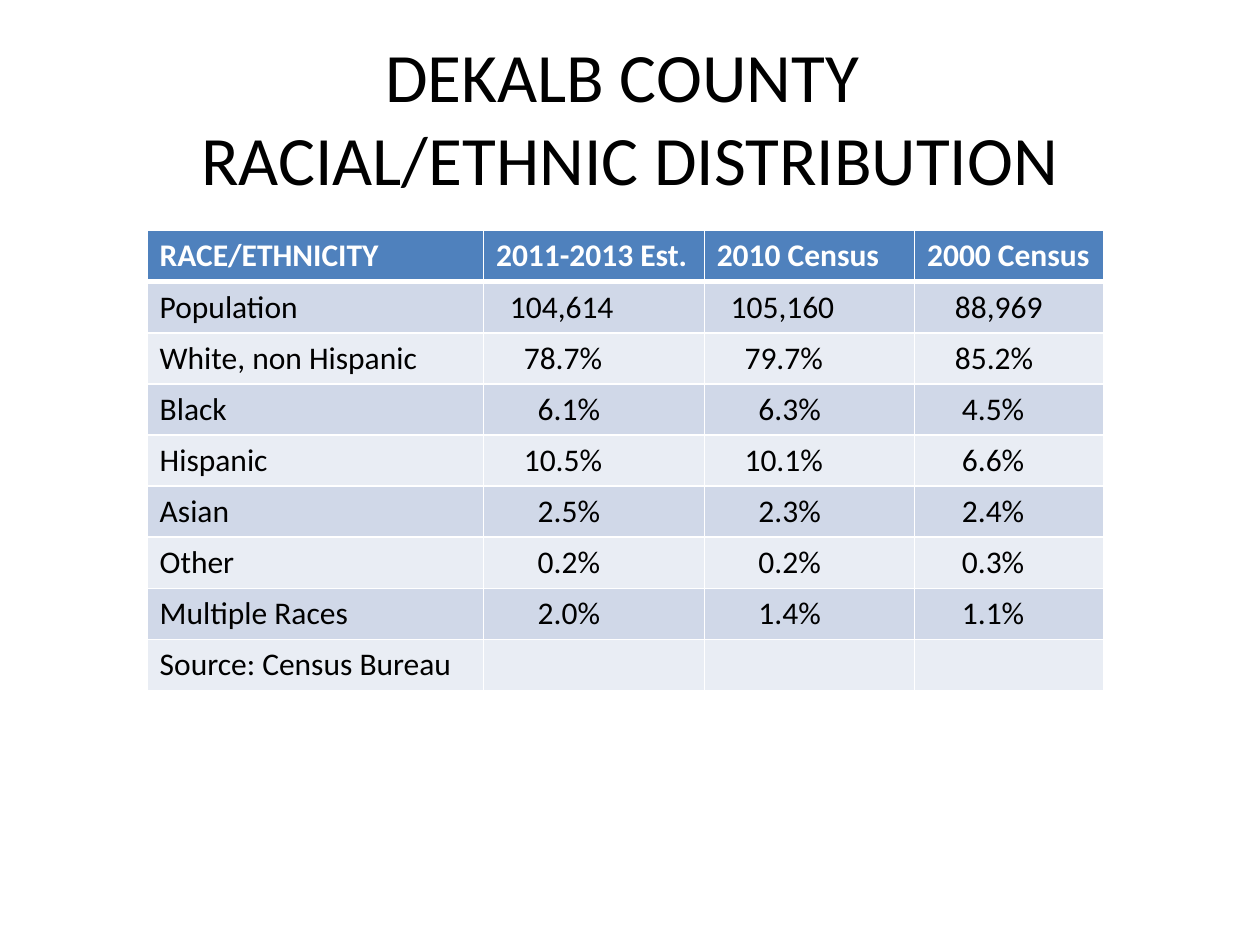
from dataclasses import dataclass

import pptx
import pptx.dml.color
import pptx.enum.text
import pptx.oxml
import pptx.oxml.ns
import pptx.util
from pptx.util import Cm

RGBColor = pptx.dml.color.RGBColor
BLACK = RGBColor(0x00, 0x00, 0x00)
WHITE = RGBColor(0xFF, 0xFF, 0xFF)
HEADER_BLUE = RGBColor(0x4F, 0x81, 0xBD)
BAND_DARK = RGBColor(0xD0, 0xD8, 0xE8)
BAND_LIGHT = RGBColor(0xE9, 0xED, 0xF4)
FONT = "Calibri"
CELL_MARGIN = 0.25  # cm
INDENT_STEP = 0.14  # cm


@dataclass
class RaceRow:
    label: str
    values: tuple[str, ...] = ("", "", "")
    indents: tuple[int, ...] = (0, 0, 0)  # steps before each value


HEADER = RaceRow("RACE/ETHNICITY", ("2011-2013 Est.", "2010 Census", "2000 Census"))
ROWS = [
    RaceRow("Population", ("104,614", "105,160", "88,969"), (2, 2, 4)),
    RaceRow("White, non Hispanic", ("78.7%", "79.7%", "85.2%"), (4, 4, 4)),
    RaceRow("Black", ("6.1%", "6.3%", "4.5%"), (6, 6, 5)),
    RaceRow("Hispanic", ("10.5%", "10.1%", "6.6%"), (4, 4, 5)),
    RaceRow("Asian", ("2.5%", "2.3%", "2.4%"), (6, 6, 5)),
    RaceRow("Other", ("0.2%", "0.2%", "0.3%"), (6, 6, 5)),
    RaceRow("Multiple Races", ("2.0%", "1.4%", "1.1%"), (6, 6, 5)),
    RaceRow("Source: Census Bureau"),
]
COLUMN_WIDTHS = (6.78, 4.45, 4.24, 3.81)
ROW_HEIGHT = 1.03


def add_run(p, text: str, size: float, color: RGBColor, bold: bool = False) -> None:
    r = p.add_run()
    r.text = text
    r.font.name = FONT
    r.font.size = pptx.util.Pt(size)
    r.font.bold = bold
    r.font.color.rgb = color


def set_borders(cell, top: int, bottom: int) -> None:
    """Draw white cell borders; widths are in points."""
    tc_pr = cell._tc.get_or_add_tcPr()
    sides = (("lnL", 1), ("lnR", 1), ("lnT", top), ("lnB", bottom))
    for i, (tag, width) in enumerate(sides):
        tc_pr.insert(i, pptx.oxml.parse_xml(
            f'<a:{tag} {pptx.oxml.ns.nsdecls("a")} w="{pptx.util.Pt(width)}">'
            f'<a:solidFill><a:srgbClr val="{WHITE}"/></a:solidFill></a:{tag}>'))


def fill_row(table, index: int, row: RaceRow) -> None:
    is_header = index == 0
    fill = HEADER_BLUE if is_header else BAND_DARK if index % 2 else BAND_LIGHT
    texts = (row.label, *row.values)
    for col, (text, indent) in enumerate(zip(texts, (0, *row.indents))):
        cell = table.cell(index, col)
        cell.fill.solid()
        cell.fill.fore_color.rgb = fill
        cell.margin_left = Cm(CELL_MARGIN + indent * INDENT_STEP)
        set_borders(cell, 3 if index == 1 else 1, 3 if is_header else 1)
        if text:
            add_run(cell.text_frame.paragraphs[0], text, 18,
                    WHITE if is_header else BLACK, is_header)


def add_title(s, lines: tuple[str, ...]) -> None:
    sp = s.shapes.add_textbox(Cm(1.27), Cm(0.76), Cm(22.86), Cm(3.18))
    tf = sp.text_frame
    tf.word_wrap = True
    tf.vertical_anchor = pptx.enum.text.MSO_ANCHOR.MIDDLE
    p = tf.paragraphs[0]
    p.alignment = pptx.enum.text.PP_ALIGN.CENTER
    for i, line in enumerate(lines):
        if i:
            p.add_line_break()
        add_run(p, line, 39.6, BLACK)


def add_race_table(s, rows: list[RaceRow]) -> None:
    table = s.shapes.add_table(
        len(rows), len(COLUMN_WIDTHS), Cm(2.97), Cm(4.65),
        Cm(sum(COLUMN_WIDTHS)), Cm(ROW_HEIGHT * len(rows))).table
    for column, width in zip(table.columns, COLUMN_WIDTHS):
        column.width = Cm(width)
    for i, row in enumerate(rows):
        table.rows[i].height = Cm(ROW_HEIGHT)
        fill_row(table, i, row)


def main() -> None:
    prs = pptx.Presentation()
    prs.slide_width, prs.slide_height = Cm(25.4), Cm(19.05)
    s = prs.slides.add_slide(prs.slide_layouts[6])

    # Title
    add_title(s, ("DEKALB COUNTY ", "RACIAL/ETHNIC DISTRIBUTION"))

    # Distribution table
    add_race_table(s, [HEADER, *ROWS])

    prs.save("out.pptx")


if __name__ == "__main__":
    main()
